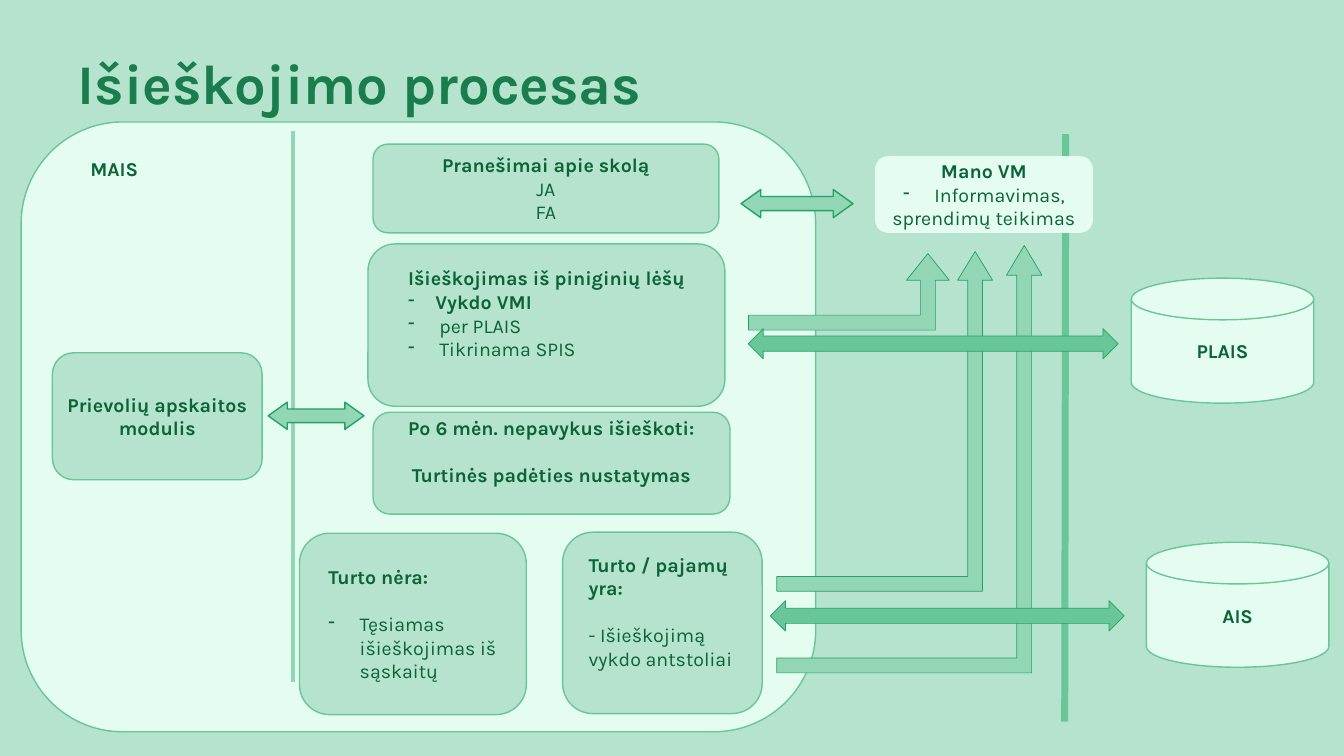
from dataclasses import dataclass

from lxml import etree
from pptx import Presentation
from pptx import util as u
from pptx.dml.color import RGBColor
from pptx.enum import shapes, text
from pptx.oxml import ns

BACKGROUND = RGBColor(0xB5, 0xE3, 0xCD)
MINT = RGBColor(0xE4, 0xFD, 0xF0)
EDGE = RGBColor(0x68, 0xC6, 0x99)
ARROW = RGBColor(0x92, 0xD6, 0xB6)
ARROW_EDGE = RGBColor(0x21, 0xA3, 0x65)
INK = RGBColor(0x0A, 0x64, 0x38)
TITLE_INK = RGBColor(0x19, 0x7D, 0x4D)
FONT = "Karla"
LINE_PT = 16.8
LINE_IN = 0.23
INDENT = 0.31

AUTO = shapes.MSO_SHAPE
LEFT, CENTER = text.PP_ALIGN.LEFT, text.PP_ALIGN.CENTER


@dataclass
class Para:
    """One paragraph of a box; gap opens one line above it."""
    text: str
    bold: bool = False
    indent: float = 0
    gap: bool = False


def style_run(r, size, color, bold):
    """Set the font of a run."""
    r.font.name = FONT
    r.font.size = u.Pt(size)
    r.font.bold = bold
    r.font.color.rgb = color


def add_bullet(p, indent):
    """Give a paragraph a hanging dash."""
    pPr = p._p.get_or_add_pPr()
    pPr.set("marL", str(u.Inches(indent)))
    pPr.set("indent", str(-u.Inches(indent)))
    etree.SubElement(pPr, ns.qn("a:buChar"), char="-")


def fill_text(sp, paras, align=CENTER, left=0.05, bottom=0.05):
    """Write paragraphs into a shape."""
    tf = sp.text_frame
    tf.word_wrap = True
    tf.margin_left, tf.margin_right = u.Inches(left), u.Inches(0.05)
    tf.margin_top, tf.margin_bottom = u.Inches(0.05), u.Inches(bottom)
    for i, para in enumerate(paras):
        p = tf.paragraphs[0] if i == 0 else tf.add_paragraph()
        p.alignment = align
        if para.gap:
            p.space_before = u.Pt(LINE_PT)
        if para.indent:
            add_bullet(p, para.indent)
        r = p.add_run()
        r.text = para.text
        style_run(r, 14, INK, para.bold)


def add_auto(s, kind, x, y, w, h, fill, edge=EDGE, width=1.0):
    """Add a flat preset shape."""
    sp = s.shapes.add_shape(kind, *map(u.Inches, (x, y, w, h)))
    sp.shadow.inherit = False
    sp.fill.solid()
    sp.fill.fore_color.rgb = fill
    if edge is None:
        sp.line.fill.background()
    else:
        sp.line.color.rgb = edge
        sp.line.width = u.Pt(width)
    return sp


def add_line(s, x1, y1, x2, y2, color, width):
    """Add a flat straight line."""
    line = s.shapes.add_connector(
        shapes.MSO_CONNECTOR.STRAIGHT, *map(u.Inches, (x1, y1, x2, y2)))
    line.line.color.rgb = color
    line.line.width = u.Pt(width)
    etree.SubElement(line._element.spPr, ns.qn("a:effectLst"))


def add_double_arrow(s, x, y, w, h, fill=ARROW, width=1.0, head=0.7):
    """Add a two-headed block arrow."""
    sp = add_auto(s, AUTO.LEFT_RIGHT_ARROW, x, y, w, h, fill, ARROW_EDGE, width)
    sp.adjustments[0], sp.adjustments[1] = 0.5, head


def add_bent_arrow(s, x, y, w, h, shaft, half_head, head):
    """Add an arrow that runs right and then turns up."""
    sp = add_auto(s, AUTO.BENT_ARROW, x, y, w, h, ARROW, ARROW_EDGE, 0.5)
    for i, value in enumerate((shaft, half_head, head, 0)):
        sp.adjustments[i] = value
    sp.rotation = 90
    sp._element.spPr.xfrm.set("flipH", "1")


def build_title(s, x, y, w, h):
    """Place the slide title."""
    sp = s.shapes.title
    sp.left, sp.top, sp.width, sp.height = map(u.Inches, (x, y, w, h))
    tf = sp.text_frame
    tf.auto_size = text.MSO_AUTO_SIZE.NONE
    tf.vertical_anchor = text.MSO_ANCHOR.MIDDLE
    p = tf.paragraphs[0]
    p.alignment = LEFT
    p.line_spacing = 1.0
    r = p.add_run()
    r.text = "Išieškojimo procesas"
    style_run(r, 40, TITLE_INK, True)


def build_system(s, x, y, w, h):
    """Draw the MAIS panel with its module and process steps."""
    panel = add_auto(s, AUTO.ROUNDED_RECTANGLE, x, y, w, h, MINT)
    fill_text(panel, [Para("MAIS", True)], LEFT, left=0.39)
    panel.text_frame.vertical_anchor = text.MSO_ANCHOR.TOP
    add_line(s, x + 2.7, y + 0.09, x + 2.7, y + 5.56, ARROW, 3)
    steps = [
        ((0.31, 2.29, 2.08, 1.26), {},
         [Para("Prievolių apskaitos modulis", True)]),
        ((3.49, 0.22, 3.43, 0.88), {},
         [Para("Pranešimai apie skolą", True), Para("JA"), Para("FA")]),
        ((3.44, 1.21, 3.54, 1.61),
         {"align": LEFT, "left": 0.32, "bottom": 0.05 + LINE_IN},
         [Para("Išieškojimas iš piniginių lėšų", True),
          Para("Vykdo VMI", True, 0.27),
          Para("per PLAIS", indent=INDENT),
          Para("Tikrinama SPIS", indent=INDENT)]),
        ((3.49, 2.88, 3.54, 1.01), {"bottom": 0.05 + LINE_IN},
         [Para("Po 6 mėn. nepavykus išieškoti:", True),
          Para("Turtinės padėties nustatymas", True, gap=True)]),
        ((2.76, 4.08, 2.25, 1.8), {"align": LEFT, "left": 0.2},
         [Para("Turto nėra:", True),
          Para("Tęsiamas išieškojimas iš sąskaitų", indent=INDENT, gap=True)]),
        ((5.37, 4.07, 1.98, 1.8),
         {"align": LEFT, "left": 0.17, "bottom": 0.05 + LINE_IN},
         [Para("Turto / pajamų yra:", True),
          Para("- Išieškojimą vykdo antstoliai", gap=True)]),
    ]
    for (dx, dy, width, height), layout, paras in steps:
        sp = add_auto(s, AUTO.ROUNDED_RECTANGLE, x + dx, y + dy, width, height,
                      BACKGROUND)
        fill_text(sp, paras, **layout)
    add_double_arrow(s, x + 2.45, y + 2.78, 0.95, 0.27)


def build_exchange(s, x, y, w, h):
    """Draw the outside systems and the arrows that link them."""
    add_line(s, x + 3.22, y, x + 3.21, y + h, EDGE, 5)
    for name, dx, dy in (("PLAIS", 3.87, 1.43), ("AIS", 4.02, 4.05)):
        disk = add_auto(s, AUTO.FLOWCHART_MAGNETIC_DISK, x + dx, y + dy,
                        1.81, 1.24, MINT)
        fill_text(disk, [Para(name, True)])
    portal = add_auto(s, AUTO.ROUNDED_RECTANGLE, x + 1.33, y + 0.22,
                      2.16, 0.76, MINT, None)
    fill_text(portal, [Para("Mano VM", True),
                       Para("Informavimas,", indent=INDENT),
                       Para("sprendimų teikimas")])
    for dx, dy, width, height, *bend in (
            (-0.45, 1.91, 4.24, 2.63, 0.056, 0.067, 0.112),
            (-0.26, 1.78, 3.37, 2.14, 0.068, 0.081, 0.133),
            (0.69, 0.57, 0.76, 1.99, 0.196, 0.279, 0.348)):
        add_bent_arrow(s, x + dx, y + dy, width, height, *bend)
    add_double_arrow(s, x, y + 0.55, 1.11, 0.28)
    for dx, dy, width in ((0.07, 1.93, 3.67), (0.29, 4.63, 3.51)):
        add_double_arrow(s, x + dx, y + dy, width, 0.3, EDGE, 0.5, 0.5)


def main():
    """Build and save the slide."""
    prs = Presentation()
    prs.slide_width, prs.slide_height = u.Inches(13.33), u.Inches(7.5)
    s = prs.slides.add_slide(prs.slide_layouts[5])
    s.background.fill.solid()
    s.background.fill.fore_color.rgb = BACKGROUND
    build_title(s, 0.67, 0.43, 6.16, 0.77)
    build_system(s, 0.21, 1.21, 7.88, 6.05)
    build_exchange(s, 7.35, 1.33, 5.83, 5.83)
    prs.save("out.pptx")


if __name__ == "__main__":
    main()
